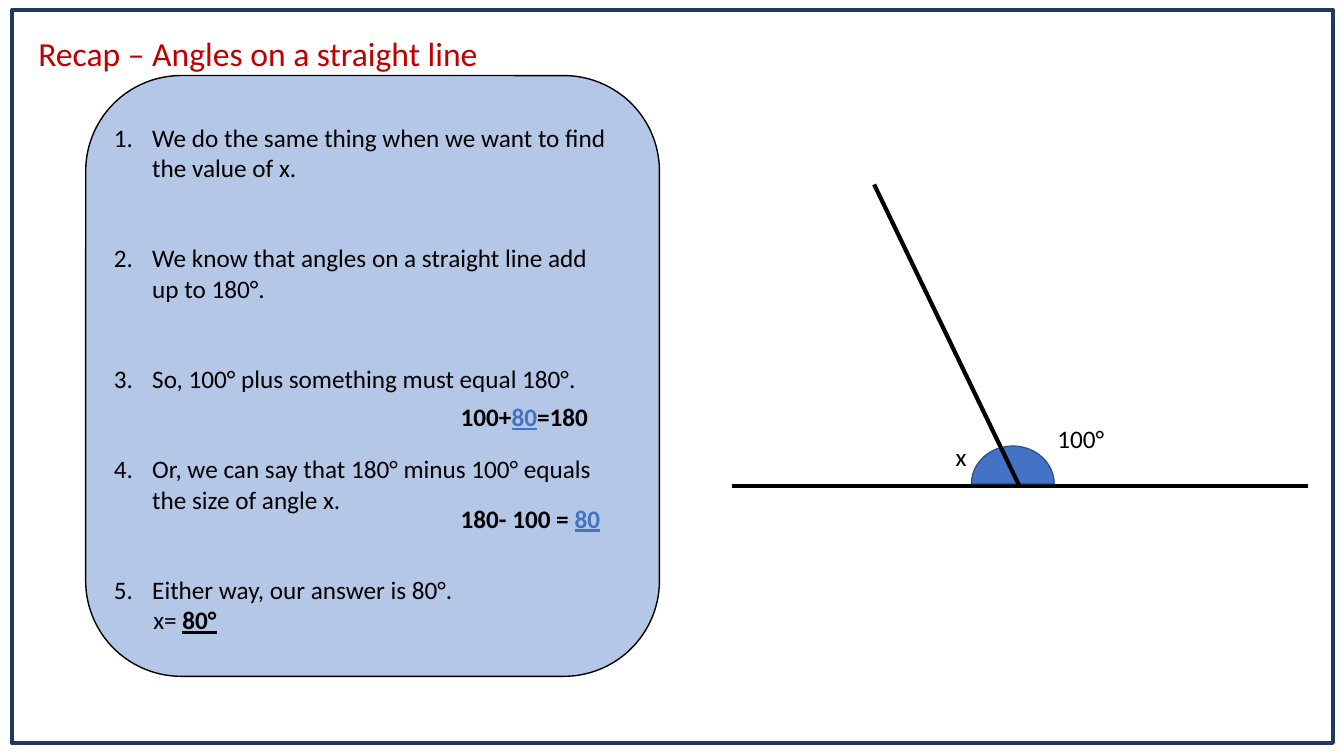
from lxml import etree
from pptx import Presentation
from pptx.dml.color import RGBColor
from pptx.enum import shapes, text
from pptx.oxml.ns import qn
from pptx.util import Inches, Pt

BLACK, BLUE, RED = "000000", "4472C4", "C00000"
LINE_GAP = 43  # two empty lines of 18 pt text

STEPS = [
    ("We do the same thing when we want to find the value of x.", 0),
    ("We know that angles on a straight line add up to 180°.", LINE_GAP),
    ("So, 100° plus something must equal 180°.", LINE_GAP),
    ("Or, we can say that 180° minus 100° equals the size of angle x.", LINE_GAP),
    ("Either way, our answer is 80°.", LINE_GAP),
]


def rgb(value):
    return RGBColor.from_string(value)


def set_attrs(obj, values):
    for name, value in values.items():
        setattr(obj, name, value)


def place(sp, box):
    names = ("left", "top", "width", "height")
    set_attrs(sp, dict(zip(names, map(Inches, box))))


def set_frame(tf, wrap):
    set_attrs(tf, {"word_wrap": wrap, "auto_size": text.MSO_AUTO_SIZE.NONE,
                   "vertical_anchor": text.MSO_ANCHOR.TOP})


def add_run(p, words, size=18, color=BLACK, **font):
    r = p.add_run()
    r.text = words
    set_attrs(r.font, {"name": "Calibri", "size": Pt(size), **font})
    r.font.color.rgb = rgb(color)


def add_shape(parent, kind, box, fill, line, width):
    sp = parent.add_shape(kind, *map(Inches, box))
    sp.shadow.inherit = False
    if fill:
        sp.fill.solid()
        sp.fill.fore_color.rgb = rgb(fill)
    else:
        sp.fill.background()
    sp.line.color.rgb = rgb(line)
    sp.line.width = Pt(width)
    return sp


def add_line(parent, start, end):
    sp = parent.add_connector(shapes.MSO_CONNECTOR.STRAIGHT,
                              *map(Inches, start + end))
    sp.line.color.rgb = rgb(BLACK)
    sp.line.width = Pt(3)
    etree.SubElement(sp.element.spPr, qn("a:effectLst"))


def add_label(parent, box, runs):
    sp = parent.add_textbox(*map(Inches, box))
    set_frame(sp.text_frame, False)
    for words, font in runs:
        add_run(sp.text_frame.paragraphs[0], words, **font)


def set_list_style(p, indent, hanging, bullet, **attrs):
    pPr = p._p.get_or_add_pPr()
    pPr.set("marL", str(Inches(indent)))
    pPr.set("indent", str(-Inches(hanging)))
    etree.SubElement(pPr, qn(bullet), attrs)


def fill_title(title):
    place(title, (0.28, 0.28, 4.6, 0.5))
    set_frame(title.text_frame, False)
    p = title.text_frame.paragraphs[0]
    p.alignment = text.PP_ALIGN.LEFT
    add_run(p, "Recap – Angles on a straight line", 24, RED)


def fill_steps(body):
    place(body, (1.03, 1.16, 5.14, 5.25))
    tf = body.text_frame
    set_frame(tf, True)
    for i, (words, gap) in enumerate(STEPS):
        p = tf.paragraphs[0] if i == 0 else tf.add_paragraph()
        p.space_before = Pt(gap)
        set_list_style(p, 0.38, 0.38, "a:buAutoNum", type="arabicPeriod")
        add_run(p, words)
    answer = tf.add_paragraph()
    answer.space_before = Pt(0)
    set_list_style(answer, 0.39, 0, "a:buNone")
    add_run(answer, "x= ")
    add_run(answer, "80°", bold=True, underline=True)


def draw_angle(parent):
    add_line(parent, (7.26, 4.82), (12.97, 4.82))
    arc = add_shape(parent, shapes.MSO_SHAPE.PIE, (9.67, 4.39, 0.75, 0.82),
                    BLUE, "325491", 1)
    arc.rotation = 90
    arc.adjustments[0], arc.adjustments[1] = 54, 162  # half circle
    add_line(parent, (8.67, 1.83), (10.11, 4.82))
    add_label(parent, (10.39, 4.15, 0.67, 0.4), [("100°", {})])
    add_label(parent, (9.38, 4.33, 0.31, 0.4), [("x", {})])


def main():
    prs = Presentation()
    set_attrs(prs, {"slide_width": Inches(13.33), "slide_height": Inches(7.5)})
    s = prs.slides.add_slide(prs.slide_layouts[1])
    title, body = s.shapes.title, s.placeholders[1]

    # Border and angle diagram
    add_shape(s.shapes, shapes.MSO_SHAPE.RECTANGLE, (0.12, 0.1, 13.1, 7.27),
              None, "203864", 3)
    draw_angle(s.shapes.add_group_shape().shapes)

    # Steps on the card
    add_shape(s.shapes, shapes.MSO_SHAPE.ROUNDED_RECTANGLE,
              (0.85, 0.75, 5.69, 5.96), "B4C7E7", BLACK, 1)
    fill_steps(body)
    s.shapes.element.append(body.element)

    # Worked sums
    bold = {"bold": True}
    result = {"bold": True, "underline": True, "color": BLUE}
    add_label(s.shapes, (4.47, 3.93, 1.48, 0.4),
              [("100+", bold), ("80", result), ("=180", bold)])
    add_label(s.shapes, (4.47, 4.94, 1.6, 0.4),
              [("180- 100 = ", bold), ("80", result)])

    # Title
    fill_title(title)
    s.shapes.element.append(title.element)

    prs.save("out.pptx")


if __name__ == "__main__":
    main()
